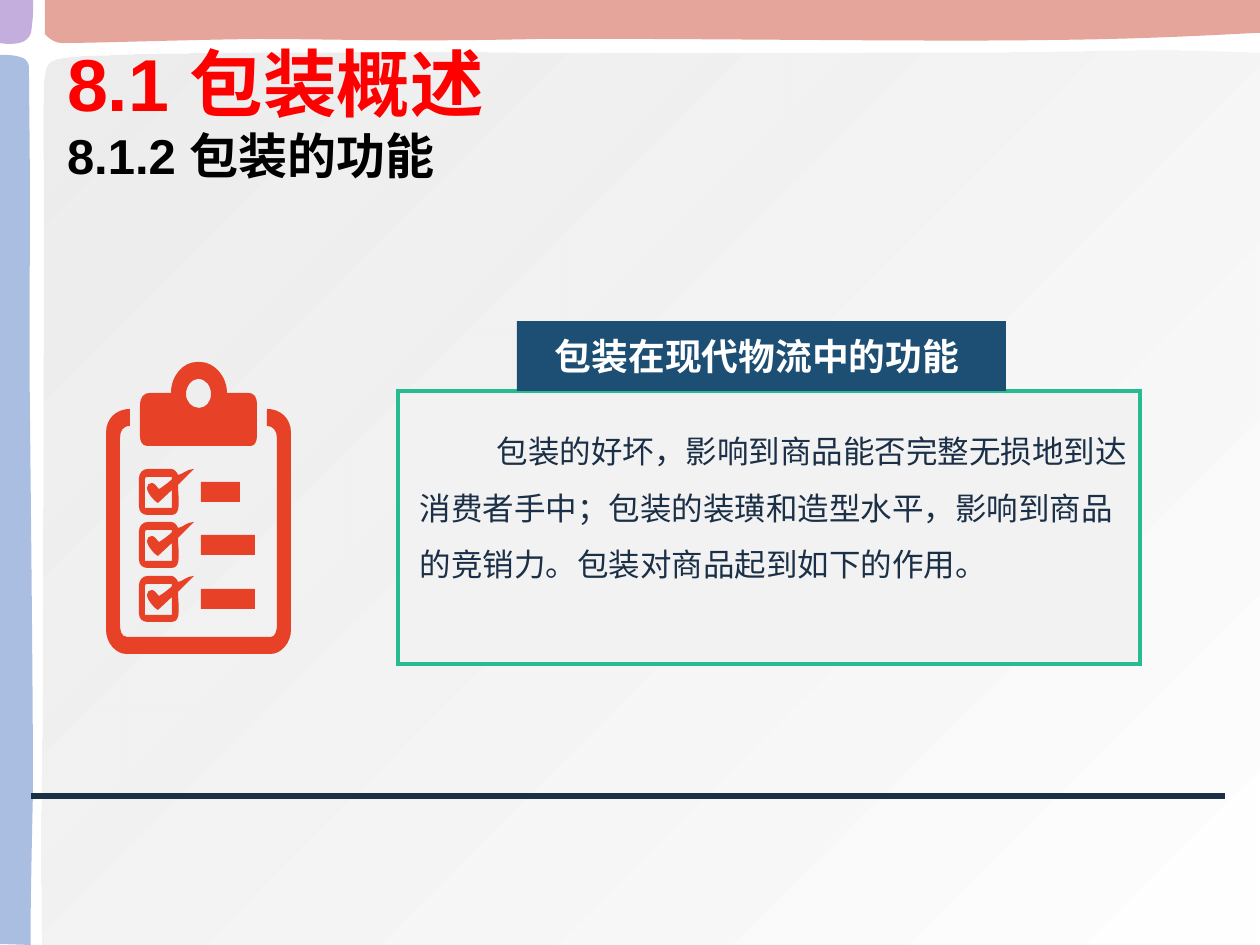
from lxml import etree
from pptx import Presentation
from pptx.dml.color import RGBColor
from pptx.enum.shapes import MSO_CONNECTOR, MSO_SHAPE
from pptx.enum.text import MSO_ANCHOR, MSO_AUTO_SIZE, PP_ALIGN
from pptx.oxml.ns import qn
from pptx.util import Pt

STRAIGHT = MSO_CONNECTOR.STRAIGHT
RECTANGLE = MSO_SHAPE.RECTANGLE
TOP, MIDDLE = MSO_ANCHOR.TOP, MSO_ANCHOR.MIDDLE
LEFT = PP_ALIGN.LEFT
NO_FIT = MSO_AUTO_SIZE.NONE

LATIN_FONT = "Arial"
CHINESE_FONT = "Noto Sans CJK SC"
RED = RGBColor(0xFF, 0x00, 0x00)
BLACK = RGBColor(0x00, 0x00, 0x00)
WHITE = RGBColor(0xFF, 0xFF, 0xFF)
NAVY = RGBColor(0x1B, 0x2F, 0x47)
BLUE = RGBColor(0x1D, 0x4E, 0x74)
GREEN = RGBColor(0x26, 0xBB, 0x91)
ORANGE = RGBColor(0xE7, 0x41, 0x27)
LIGHT_GREY = RGBColor(0xF2, 0xF2, 0xF2)
PANEL_GREY = RGBColor(0xE6, 0xE6, 0xE6)
SALMON = RGBColor(0xDA, 0x7F, 0x70)
SKY = RGBColor(0x85, 0xA3, 0xD5)
LILAC = RGBColor(0xAC, 0x8C, 0xD0)

TITLE = "8.1 包装概述"
SUBTITLE = "8.1.2 包装的功能"
HEADING = "包装在现代物流中的功能"
BODY = ("包装的好坏，影响到商品能否完整无损地到达消费者手中；"
        "包装的装璜和造型水平，影响到商品的竞销力。包装对商品起到如下的作用。")

PANEL = [(1260, 945), (1260, 53), (1116, 48, 1077, 53, 958, 53), (839, 53, 693, 54, 546, 53),
         (398, 52, 155, 52, 72, 57), (45, 60, 45, 62, 44, 92), (43, 121, 44, 139, 44, 229),
         (44, 323, 43, 519, 43, 638), (43, 757, 40, 834, 42, 945)]
TOP_BAND = [(1260, 0), (1260, 33), (1261, 32, 1169, 39, 1048, 40), (927, 42, 669, 38, 537, 39),
            (404, 42, 334, 39, 256, 39), (176, 40, 97, 43, 62, 43), (52, 43, 45, 34, 45, 34),
            (45, 0)]
SIDE_BAND = [(0, 944), (31, 945), (30, 946, 31, 879, 33, 791), (33, 703, 31, 513, 30, 416),
             (29, 320, 30, 267, 30, 210), (30, 152, 29, 95, 29, 68), (29, 60, 23, 58, 23, 58),
             (14, 54, 0, 55, 0, 55)]
CORNER = [(0, 0), (33, 0), (34, 15, 31, 33, 31, 33), (29, 39, 24, 42, 19, 43),
          (9, 45, 0, 43, 0, 43)]
BANDS = [(TOP_BAND, SALMON), (SIDE_BAND, SKY), (CORNER, LILAC)]

BOARD = [(120, 438), (120, 431, 123, 426, 130, 426), (130, 409), (117, 409, 106, 418, 106, 433),
         (106, 630), (106, 643, 116, 654, 126, 654), (271, 654), (281, 654, 291, 643, 291, 630),
         (291, 433), (291, 418, 280, 409, 267, 409), (267, 426), (273, 426, 277, 431, 277, 438),
         (277, 625), (277, 631, 275, 637, 271, 637), (127, 637), (121, 637, 120, 630, 120, 624)]
CLIP = [(171, 393), (150, 393), (144, 393, 140, 397, 140, 406), (140, 436),
        (140, 441, 142, 446, 147, 446), (251, 446), (255, 446, 257, 441, 257, 436), (257, 406),
        (257, 397, 255, 393, 247, 393), (227, 393), (227, 376, 214, 362, 200, 362), (197, 362),
        (183, 362, 171, 376, 171, 393)]
CLIP_HOLE = [(186, 394), (186, 386, 192, 379, 198, 379), (206, 379, 211, 386, 211, 394),
             (211, 402, 206, 408, 199, 408), (192, 408, 186, 402, 186, 394)]
CHECK_BOX = [(39, 6), (38, 3, 35, 0, 32, 0), (9, 0), (4, 0, 0, 4, 0, 9), (0, 38),
             (0, 43, 4, 46, 8, 46), (33, 46), (43, 46, 39, 28, 39, 16), (55, 0),
             (48, 0, 43, 6, 39, 6)]
CHECK_HOLE = [(6, 10), (6, 8, 7, 8, 9, 8), (32, 8), (33, 8, 33, 8, 33, 10),
              (33, 11, 21, 20, 20, 20), (19, 20, 16, 14, 13, 14), (10, 14, 8, 16, 8, 19),
              (8, 24, 16, 33, 19, 34), (33, 21), (33, 39), (6, 39)]
CHECK_LEFT, BAR_LEFT, BAR_DROP, BAR_HEIGHT = 139, 201, 13, 20
CHECK_ROWS = [(469, 39), (522, 54), (576, 54)]


def px(value):
    return round(value * 914400 / 126)


def shifted(outline, left, top):
    return [tuple(value + (left, top)[index % 2] for index, value in enumerate(step))
            for step in outline]


def bend(segment, step, shape):
    curve = etree.Element(qn("a:cubicBezTo"))
    for x, y in zip(step[::2], step[1::2]):
        point = etree.SubElement(curve, qn("a:pt"))
        point.set("x", str(px(x) - shape.left))
        point.set("y", str(px(y) - shape.top))
    segment.getparent().replace(segment, curve)


def add_outlines(slide, outlines, color):
    contours = [[tuple(map(px, step[-2:])) for step in outline] for outline in outlines]
    builder = slide.shapes.build_freeform(*contours[0][0], scale=1.0)
    for index, points in enumerate(contours):
        if index:
            builder.move_to(*points[0])
        builder.add_line_segments(points[1:], close=True)
    shape = builder.convert_to_shape()
    steps = [step for outline in outlines for step in outline[1:]]
    for segment, step in zip(list(shape._element.iter(qn("a:lnTo"))), steps):
        if len(step) == 6:
            bend(segment, step, shape)
    shape.shadow.inherit = False
    shape.fill.solid()
    shape.fill.fore_color.rgb = color
    shape.line.fill.background()
    return shape


def set_opacity(shape, percent):
    color_element = next(shape._element.spPr.iter(qn("a:srgbClr")))
    etree.SubElement(color_element, qn("a:alpha")).set("val", str(percent * 1000))


def add_rectangle(slide, box, color):
    shape = slide.shapes.add_shape(RECTANGLE, *map(px, box))
    shape.shadow.inherit = False
    shape.fill.solid()
    shape.fill.fore_color.rgb = color
    shape.line.fill.background()
    return shape


def format_run(run, size, color, bold=False, latin=CHINESE_FONT):
    run.font.name = latin
    run.font.size = Pt(size)
    run.font.bold = bold
    run.font.color.rgb = color
    etree.SubElement(run.font._element, qn("a:ea")).set("typeface", CHINESE_FONT)


def set_frame(text_frame, anchor, left, top, right, bottom):
    text_frame.word_wrap = True
    text_frame.auto_size = NO_FIT
    text_frame.vertical_anchor = anchor
    text_frame.margin_left, text_frame.margin_top = px(left), px(top)
    text_frame.margin_right, text_frame.margin_bottom = px(right), px(bottom)


def add_backdrop(slide):
    panel = add_outlines(slide, [PANEL], PANEL_GREY)
    panel.fill.gradient()
    panel.fill.gradient_angle = 315
    for stop, color, position in zip(panel.fill.gradient_stops, (PANEL_GREY, WHITE), (0, 1)):
        stop.color.rgb = color
        stop.position = position
    set_opacity(panel, 70)
    for outline, color in BANDS:
        set_opacity(add_outlines(slide, [outline], color), 70)
    rule = slide.shapes.add_connector(STRAIGHT, px(1225), px(796), px(31), px(796))
    rule.line.color.rgb = NAVY
    rule.line.width = Pt(3)
    etree.SubElement(rule._element.spPr, qn("a:effectLst"))


def add_clipboard(slide):
    outlines = [BOARD, CLIP, CLIP_HOLE]
    for top, width in CHECK_ROWS:
        outlines += [shifted(part, CHECK_LEFT, top) for part in (CHECK_BOX, CHECK_HOLE)]
        bar = [(0, 0), (width, 0), (width, BAR_HEIGHT), (0, BAR_HEIGHT)]
        outlines.append(shifted(bar, BAR_LEFT, top + BAR_DROP))
    add_outlines(slide, outlines, ORANGE)


def add_card(slide):
    frame = add_rectangle(slide, (398, 391, 742, 273), LIGHT_GREY)
    frame.line.color.rgb = GREEN
    frame.line.width = Pt(2)
    etree.SubElement(frame.line._ln, qn("a:miter")).set("lim", "800000")
    heading = add_rectangle(slide, (517, 321, 489, 70), BLUE)
    heading.text_frame.text = HEADING
    set_frame(heading.text_frame, MIDDLE, 38, 6, 13, 6)
    heading.text_frame.paragraphs[0].alignment = LEFT
    format_run(heading.text_frame.paragraphs[0].runs[0], 21, WHITE, True)
    body = slide.shapes.add_textbox(*map(px, (420, 413, 716, 171)))
    body.text_frame.text = BODY
    set_frame(body.text_frame, TOP, 0, 0, 0, 0)
    paragraph = body.text_frame.paragraphs[0]
    paragraph.line_spacing = 1.5
    paragraph._p.get_or_add_pPr().set("indent", str(px(77)))
    format_run(paragraph.runs[0], 18, NAVY)


def place_title(slide):
    title = slide.shapes.title
    slide.shapes._spTree.append(title._element)
    title.left, title.top, title.width, title.height = map(px, (54, 86, 927, 130))
    title.text_frame.text = f"{TITLE}\v{SUBTITLE}"
    set_frame(title.text_frame, MIDDLE, 13, 6, 13, 86)
    paragraph = title.text_frame.paragraphs[0]
    paragraph.alignment = LEFT
    paragraph.line_spacing = 1.0
    for run, size, color in zip(paragraph.runs, (42, 28), (RED, BLACK)):
        format_run(run, size, color, True, LATIN_FONT)


def main():
    presentation = Presentation()
    presentation.slide_width, presentation.slide_height = px(1260), px(945)
    slide = presentation.slides.add_slide(presentation.slide_layouts[5])
    add_backdrop(slide)
    add_clipboard(slide)
    add_card(slide)
    place_title(slide)
    presentation.save("out.pptx")


if __name__ == "__main__":
    main()
